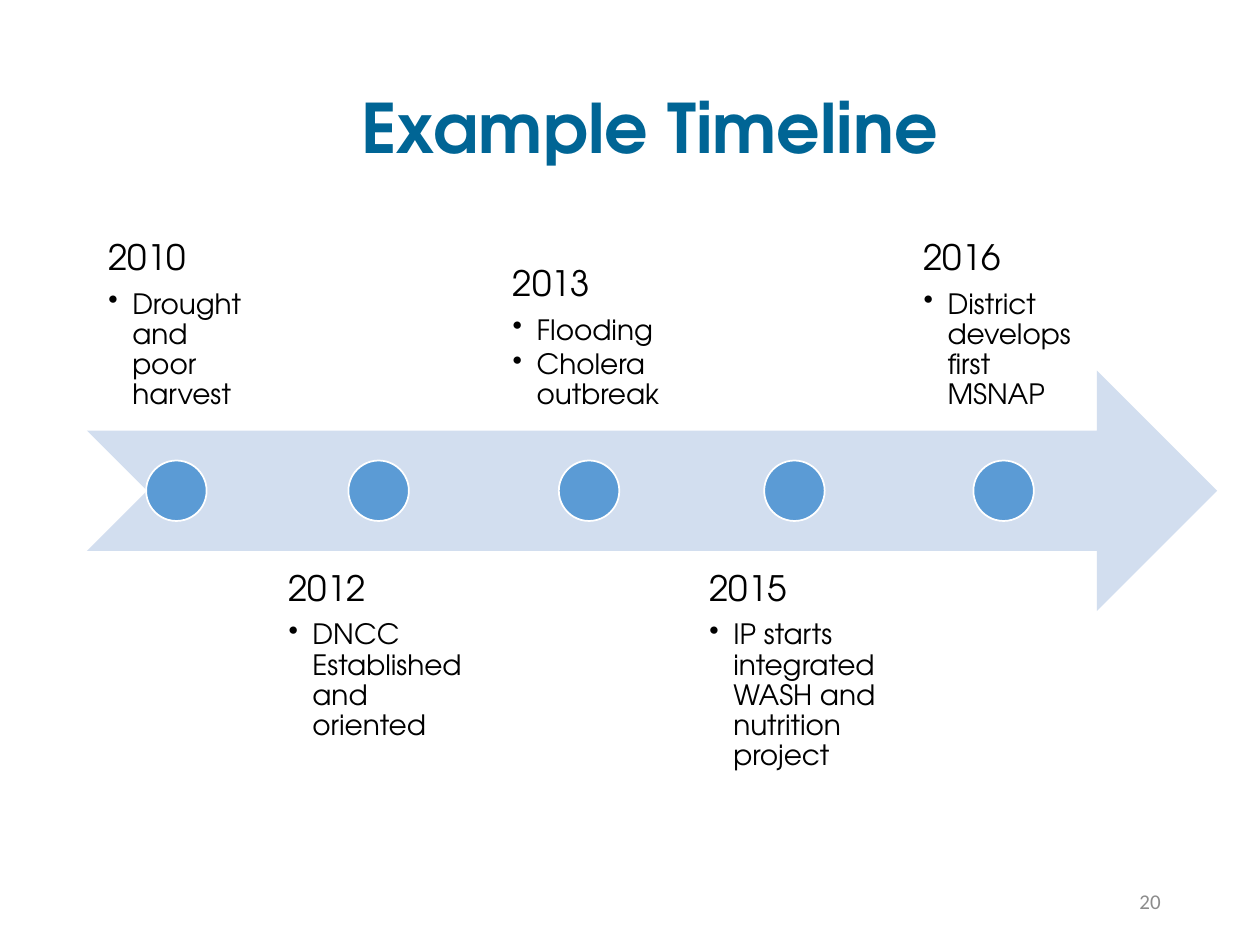
from lxml.etree import SubElement
from pptx import Presentation
from pptx.dml.color import RGBColor
from pptx.enum.shapes import MSO_SHAPE
from pptx.enum.text import MSO_ANCHOR, PP_ALIGN
from pptx.oxml.ns import qn
from pptx.util import Inches, Pt

COLORS = {
    "title": "006595",
    "number": "8C8C8C",
    "arrow": "D2DEEF",
    "dot": "5B9BD5",
    "outline": "FFFFFF",
    "text": "000000",
}
EVENTS = [
    ("2010", ["Drought and poor harvest"], 1.4),
    ("2012", ["DNCC Established and oriented"], 1.75),
    ("2013", ["Flooding", "Cholera outbreak"], 1.53),
    ("2015", ["IP starts integrated WASH and nutrition project"], 1.67),
    ("2016", ["District develops first MSNAP"], 1.59),
]
FONT = "TeX Gyre Adventor"
BAND_HEIGHT = 1.91
ARROW_TOP = 2.94
DOT_SIZE = 0.48
LABEL_GAP = 0.03


class TimelineSlide:
    """Holds the timeline style and the slide being built."""

    def __init__(self, slide):
        self.slide = slide

    def color(self, name):
        return RGBColor.from_string(COLORS[name])

    def text_box(self, left, top, width, height, anchor, margins=(0.1, 0.05)):
        box = self.slide.shapes.add_textbox(
            Inches(left), Inches(top), Inches(width), Inches(height))
        frame = box.text_frame
        frame.word_wrap = True
        frame.vertical_anchor = anchor
        frame.margin_left = frame.margin_right = Inches(margins[0])
        frame.margin_top = frame.margin_bottom = Inches(margins[1])
        return frame

    def indent(self, paragraph, margin, first_line=0):
        properties = paragraph._p.get_or_add_pPr()
        properties.set("marL", str(Inches(margin)))
        properties.set("indent", str(Inches(first_line)))
        return properties

    def bullet(self, paragraph):
        properties = self.indent(paragraph, 0.19, -0.19)
        SubElement(properties, qn("a:buChar")).set("char", "•")

    def run(self, paragraph, text, size, color="text", font=FONT, bold=False):
        run = paragraph.add_run()
        run.text = text
        run.font.name = font
        run.font.size = Pt(size)
        run.font.bold = bold
        run.font.color.rgb = self.color(color)

    def title(self, text):
        frame = self.text_box(0, 0.32, 9.31, 1.45, MSO_ANCHOR.MIDDLE)
        paragraph = frame.paragraphs[0]
        self.indent(paragraph, 1)
        paragraph.alignment = PP_ALIGN.CENTER
        paragraph.line_spacing = 0.9
        self.run(paragraph, text, 39, "title", bold=True)

    def page_number(self, text):
        frame = self.text_box(7.06, 6.95, 2.25, 0.4, MSO_ANCHOR.MIDDLE)
        paragraph = frame.paragraphs[0]
        paragraph.alignment = PP_ALIGN.RIGHT
        self.run(paragraph, text, 12, "number", "Calibri")

    def shape(self, kind, left, top, width, height, fill, outline=None):
        shape = self.slide.shapes.add_shape(
            kind, Inches(left), Inches(top), Inches(width), Inches(height))
        shape.shadow.inherit = False
        shape.fill.solid()
        shape.fill.fore_color.rgb = self.color(fill)
        if outline:
            shape.line.color.rgb = self.color(outline)
            shape.line.width = Pt(1)
        else:
            shape.line.fill.background()

    def label(self, left, top, width, anchor, year, items):
        frame = self.text_box(left, top, width, BAND_HEIGHT, anchor, (0.16, 0.16))
        heading = frame.paragraphs[0]
        heading.line_spacing = 0.9
        heading.space_after = Pt(7)
        self.run(heading, year, 20)
        for item in items:
            paragraph = frame.add_paragraph()
            self.bullet(paragraph)
            paragraph.line_spacing = 0.9
            paragraph.space_after = Pt(2.4)
            self.run(paragraph, item, 16)

    def timeline(self, events):
        self.shape(MSO_SHAPE.NOTCHED_RIGHT_ARROW, 0.69, ARROW_TOP, 8.97,
                   BAND_HEIGHT, "arrow")
        dot_top = ARROW_TOP + (BAND_HEIGHT - DOT_SIZE) / 2
        left = 0.7
        for index, (year, items, width) in enumerate(events):
            above = index % 2 == 0
            top = 1.51 if above else 4.37
            anchor = MSO_ANCHOR.BOTTOM if above else MSO_ANCHOR.TOP
            self.label(left, top, width, anchor, year, items)
            self.shape(MSO_SHAPE.OVAL, left + (width - DOT_SIZE) / 2, dot_top,
                       DOT_SIZE, DOT_SIZE, "dot", "outline")
            left += width + LABEL_GAP


def main():
    presentation = Presentation()
    presentation.slide_width = Inches(10)
    presentation.slide_height = Inches(7.5)
    slide = TimelineSlide(presentation.slides.add_slide(presentation.slide_layouts[6]))
    slide.title("Example Timeline")
    slide.page_number("20")
    slide.timeline(EVENTS)
    presentation.save("out.pptx")


if __name__ == "__main__":
    main()
